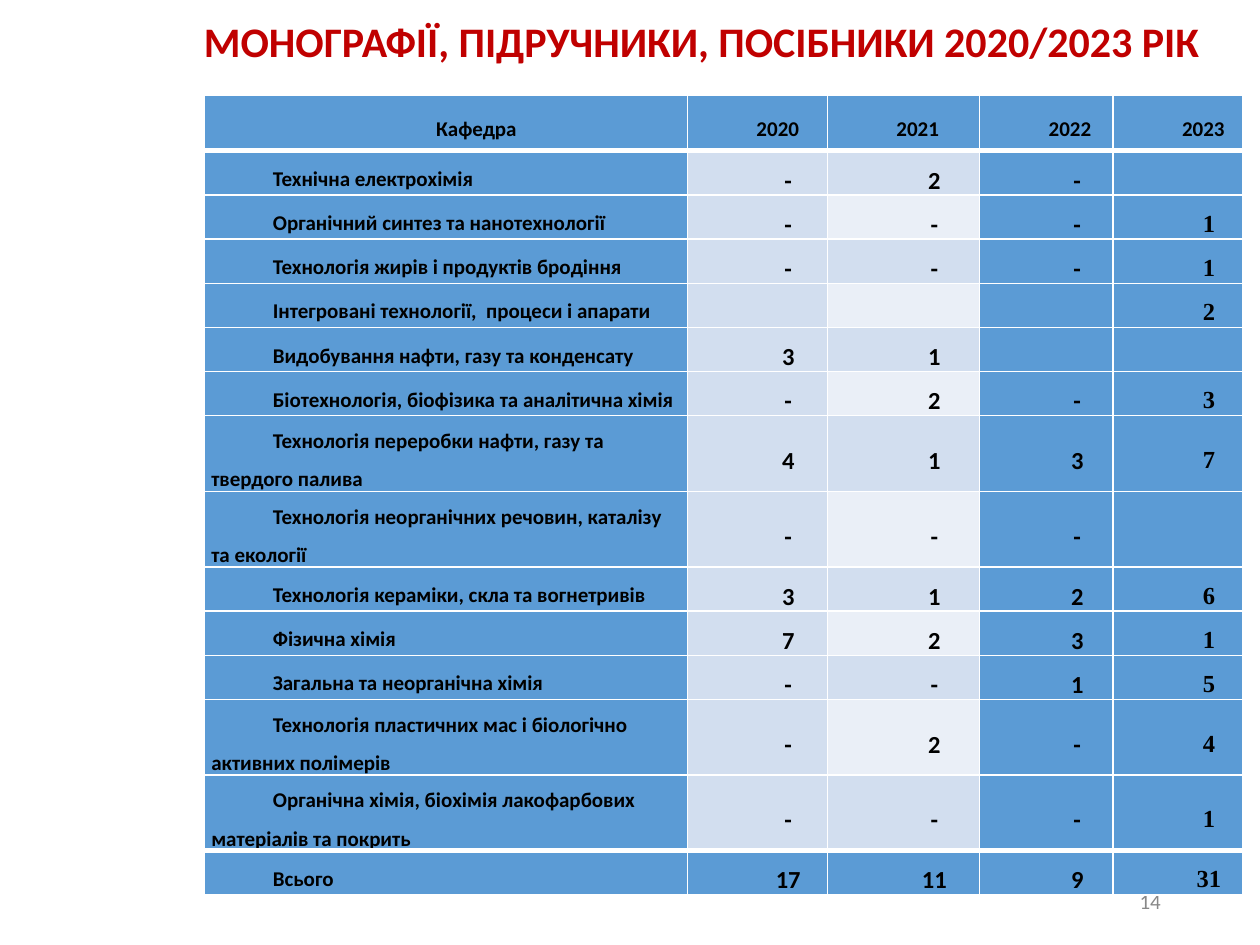
import pptx
import pptx.dml.color
import pptx.enum.text
import pptx.oxml.ns
import pptx.util
import lxml.etree

Cm = pptx.util.Cm
Pt = pptx.util.Pt
ALIGN = pptx.enum.text.PP_ALIGN
MIDDLE = pptx.enum.text.MSO_ANCHOR.MIDDLE

BLUE, PALE, PALER = "5B9BD5", "D2DEEF", "EAEFF7"
COLUMN_WIDTHS = [9.75, 2.82, 3.07, 2.69, 2.62]
HEADER_HEIGHT, ROW_HEIGHT = 1.12, 0.84
TALL_ROWS = {7: 1.14, 8: 1.14, 12: 1.4, 13: 1.4}
FIRST_LINE = 1.24

HEADINGS = ["Кафедра", "2020", "2021", "2022", "2023"]
DEPARTMENTS = [
    ["Технічна електрохімія", "-", "2", "-", ""],
    ["Органічний синтез та нанотехнології", "-", "-", "-", "1"],
    ["Технологія жирів і продуктів бродіння", "-", "-", "-", "1"],
    ["Інтегровані технології,  процеси і апарати", "", "", "", "2"],
    ["Видобування нафти, газу та конденсату", "3", "1", "", ""],
    ["Біотехнологія, біофізика та аналітична хімія", "-", "2", "-", "3"],
    ["Технологія переробки нафти, газу та твердого палива", "4", "1", "3", "7"],
    ["Технологія неорганічних речовин, каталізу та екології", "-", "-", "-", ""],
    ["Технологія кераміки, скла та вогнетривів", "3", "1", "2", "6"],
    ["Фізична хімія", "7", "2", "3", "1"],
    ["Загальна та неорганічна хімія", "-", "-", "1", "5"],
    ["Технологія пластичних мас і біологічно активних полімерів", "-", "2", "-", "4"],
    ["Органічна хімія, біохімія лакофарбових матеріалів та покрить", "-", "-", "-", "1"],
]
TOTAL = ["Всього", "17", "11", "9", "31"]


def rgb(value):
    return pptx.dml.color.RGBColor.from_string(value)


def apply(target, values):
    for name, value in values.items():
        setattr(target, name, value)


def write(paragraph, text, color, indent=0, layout=None, **font):
    apply(paragraph, layout or {})
    if indent:
        properties = paragraph._p.get_or_add_pPr()
        properties.set("marL", "0")
        properties.set("indent", str(Cm(indent)))
    run = paragraph.add_run()
    run.text = text
    apply(run.font, font)
    run.font.color.rgb = rgb(color)


def add_label(slide, place, text, color, anchor=None, **style):
    frame = slide.shapes.add_textbox(*map(Cm, place)).text_frame
    apply(frame, {"word_wrap": True, "vertical_anchor": anchor})
    write(frame.paragraphs[0], text, color, name="Calibri", **style)


def add_borders(cell, top, bottom):
    properties = cell._tc.get_or_add_tcPr()
    qn = pptx.oxml.ns.qn
    for side, width in {"L": 1, "R": 1, "T": top, "B": bottom}.items():
        line = lxml.etree.SubElement(properties, qn("a:ln" + side), w=str(Pt(width)))
        fill = lxml.etree.SubElement(line, qn("a:solidFill"))
        lxml.etree.SubElement(fill, qn("a:srgbClr"), val="FFFFFF")


def cell_color(row, column, last):
    if row in (0, last) or column not in (1, 2):
        return BLUE
    return PALER if column == 2 and row % 2 == 0 else PALE


def fill_cell(cell, text, row, column, last):
    apply(cell, {"vertical_anchor": MIDDLE, "margin_left": Cm(0.15),
                 "margin_right": Cm(0.15), "margin_top": 0, "margin_bottom": 0})
    add_borders(cell, 3 if row in (1, last) else 1, 3 if row in (0, last - 1) else 1)
    cell.fill.solid()
    cell.fill.fore_color.rgb = rgb(cell_color(row, column, last))
    if not text:
        return
    is_count = row > 0 and column > 0
    centred = is_count or row == column == 0
    large = is_count or (row == 1 and column > 0)
    write(cell.text_frame.paragraphs[0], text, "000000", FIRST_LINE,
          {"alignment": ALIGN.CENTER if centred else ALIGN.LEFT, "line_spacing": 1.5},
          name="Times New Roman" if is_count and column == 4 else "Calibri",
          size=Pt(14 if large else 12), bold=True)


def add_publications(slide, left, top):
    rows = [HEADINGS, *DEPARTMENTS, TOTAL]
    last = len(rows) - 1
    heights = [HEADER_HEIGHT] + [TALL_ROWS.get(row, ROW_HEIGHT) for row in range(1, last + 1)]
    table = slide.shapes.add_table(
        len(rows), len(HEADINGS), Cm(left), Cm(top),
        Cm(sum(COLUMN_WIDTHS)), Cm(sum(heights))).table
    apply(table, {"first_row": False, "horz_banding": False})
    for column, width in zip(table.columns, COLUMN_WIDTHS):
        column.width = Cm(width)
    for row, values in enumerate(rows):
        table.rows[row].height = Cm(heights[row])
        for column, text in enumerate(values):
            fill_cell(table.cell(row, column), text, row, column, last)


def main():
    deck = pptx.Presentation()
    apply(deck, {"slide_width": Cm(25.4), "slide_height": Cm(19.05)})
    slide = deck.slides.add_slide(deck.slide_layouts[6])
    add_label(slide, (2.11, 0.18, 22.96, 1.27),
              "МОНОГРАФІЇ, ПІДРУЧНИКИ, ПОСІБНИКИ 2020/2023 РІК", "C00000",
              indent=1.75, size=Pt(24), bold=True)
    add_label(slide, (17.93, 17.65, 5.72, 1.02), "14", "888888", MIDDLE,
              layout={"alignment": ALIGN.RIGHT}, size=Pt(12))
    add_publications(slide, 4.11, 1.92)
    deck.save("out.pptx")


if __name__ == "__main__":
    main()
